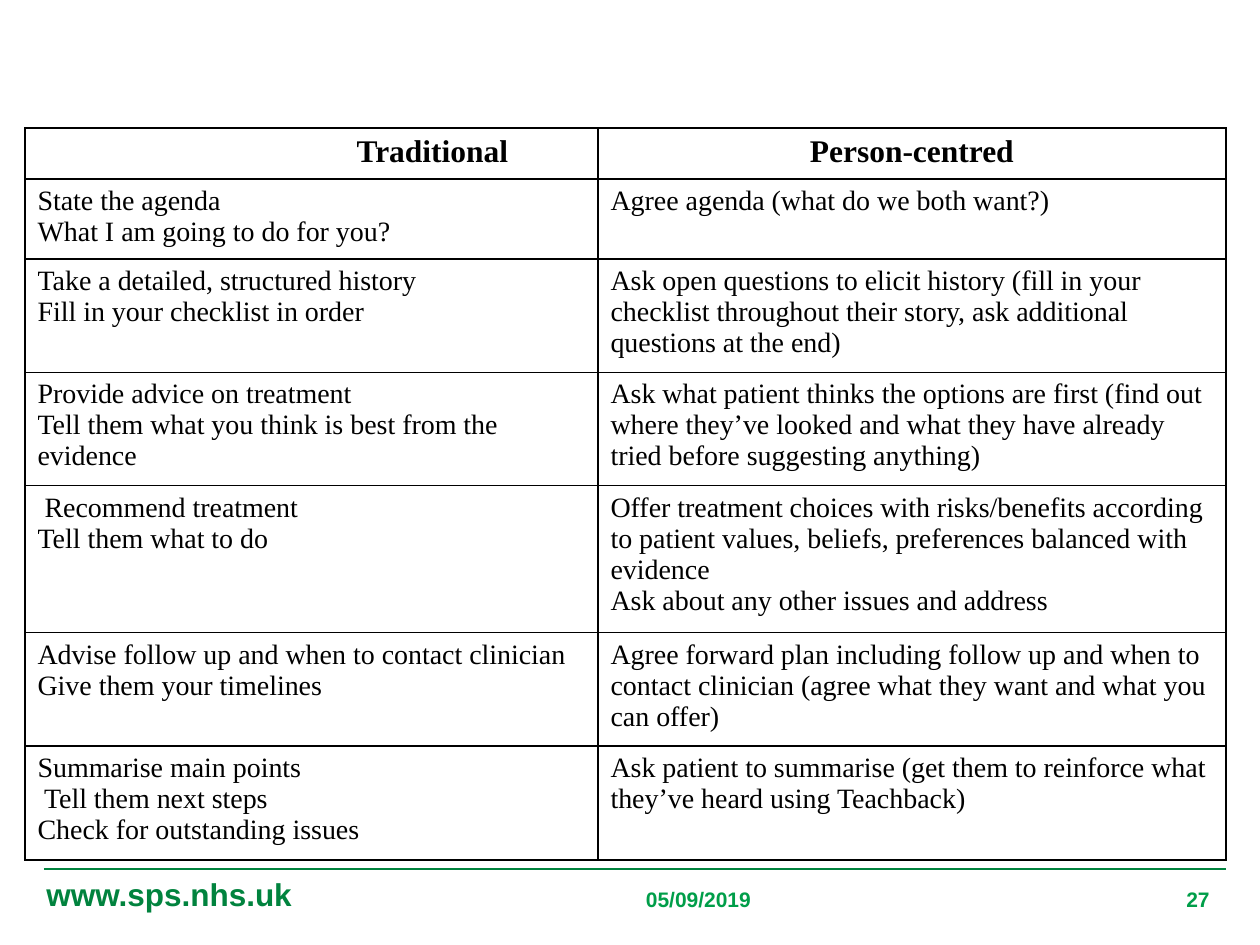
from lxml.etree import SubElement
from pptx import Presentation
from pptx.dml.color import RGBColor
from pptx.enum.shapes import MSO_CONNECTOR as CONN
from pptx.enum.text import PP_ALIGN as AL
from pptx.oxml.ns import qn
from pptx.util import Emu, Pt

HEADERS = ["Traditional", "Person-centred"]
ROWS = [
    (["State the agenda", "What I am going to do for you?"],
     ["Agree agenda (what do we both want?)"]),
    (["Take a detailed, structured history", "Fill in your checklist in order"],
     ["Ask open questions to elicit history (fill in your checklist throughout "
      "their story, ask additional questions at the end)"]),
    (["Provide advice on treatment",
      "Tell them what you think is best from the evidence"],
     ["Ask what patient thinks the options are first (find out where they’ve looked "
      "and what they have already tried before suggesting anything)"]),
    ([" Recommend treatment", "Tell them what to do"],
     ["Offer treatment choices with risks/benefits according to patient values, "
      "beliefs, preferences balanced with evidence",
      "Ask about any other issues and address"]),
    (["Advise follow up and when to contact clinician Give them your timelines"],
     ["Agree forward plan including follow up and when to contact clinician "
      "(agree what they want and what you can offer)"]),
    (["Summarise main points", " Tell them next steps",
      "Check for outstanding issues"],
     ["Ask patient to summarise (get them to reinforce what they’ve heard "
      "using Teachback)"]),
]
COL_WIDTHS = [573, 628]
ROW_HEIGHTS = [51, 80, 113, 113, 147, 113, 114]
HEADER_INDENT = 242
FOOTER = [
    ("www.sps.nhs.uk", (34, 869, 556, 50), 18, "01833E", AL.LEFT),
    ("05/09/2019", (541, 880, 315, 44), 12, "009E49", AL.CENTER),
    ("27", (898, 880, 324, 44), 12, "009E49", AL.RIGHT),
]


def px(n):
    return Emu(round(n * 914400 / 126))


def rgb(color):
    return RGBColor.from_string(color)


def write(tf, lines, size, font, color, bold=False, align=AL.LEFT):
    for i, line in enumerate(lines):
        p = tf.add_paragraph() if i else tf.paragraphs[0]
        p.alignment = align
        r = p.add_run()
        r.text = line
        r.font.size, r.font.name, r.font.bold = Pt(size), font, bold
        r.font.color.rgb = rgb(color)


def style_cell(cell):
    tcPr = cell._tc.get_or_add_tcPr()
    for side in ("lnL", "lnR", "lnT", "lnB"):
        ln = SubElement(tcPr, qn(f"a:{side}"), w=str(Pt(1)))
        fill = SubElement(ln, qn("a:solidFill"))
        SubElement(fill, qn("a:srgbClr"), val="000000")
    cell.fill.background()


prs = Presentation()
prs.slide_width, prs.slide_height = px(1260), px(945)
slide = prs.slides.add_slide(prs.slide_layouts[6])

rule = slide.shapes.add_connector(CONN.STRAIGHT, px(44), px(869), px(1226), px(869))
rule.line.color.rgb = rgb("01833E")
rule.line.width = Pt(1.5)
SubElement(rule._element.spPr, qn("a:effectLst"))

for text, box, size, color, align in FOOTER:
    tf = slide.shapes.add_textbox(*map(px, box)).text_frame
    tf.word_wrap = True
    write(tf, [text], size, "Arial", color, True, align)

table = slide.shapes.add_table(
    len(ROW_HEIGHTS), len(COL_WIDTHS), px(25), px(128),
    px(sum(COL_WIDTHS)), px(sum(ROW_HEIGHTS))).table
table.first_row = table.horz_banding = False
for col, width in zip(table.columns, COL_WIDTHS):
    col.width = px(width)
for row, height in zip(table.rows, ROW_HEIGHTS):
    row.height = px(height)
for cell in table.iter_cells():
    style_cell(cell)

for c, header in enumerate(HEADERS):
    write(table.cell(0, c).text_frame, [header], 18, "Times New Roman", "000000",
          True, AL.CENTER)
table.cell(0, 0).margin_left += px(HEADER_INDENT)
for i, row in enumerate(ROWS, 1):
    for c, lines in enumerate(row):
        write(table.cell(i, c).text_frame, lines, 16, "Times New Roman", "000000")

prs.save("out.pptx")
